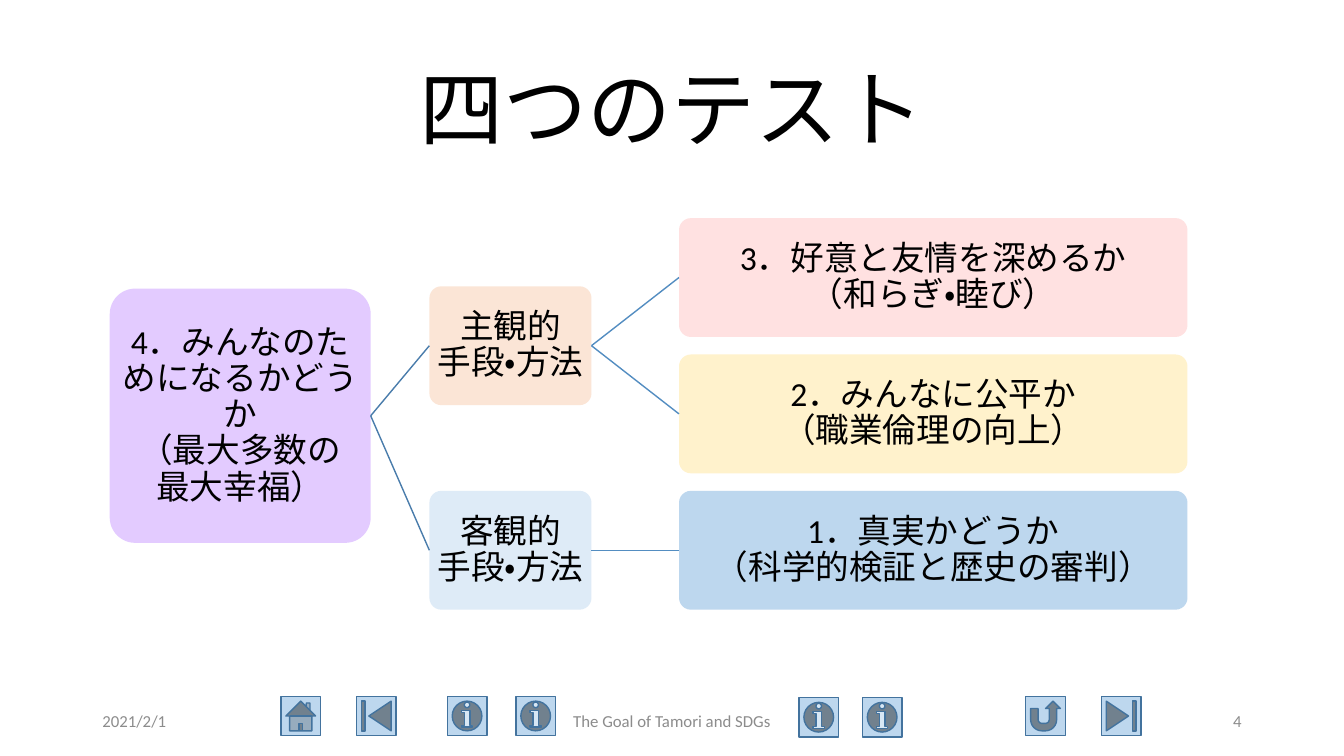
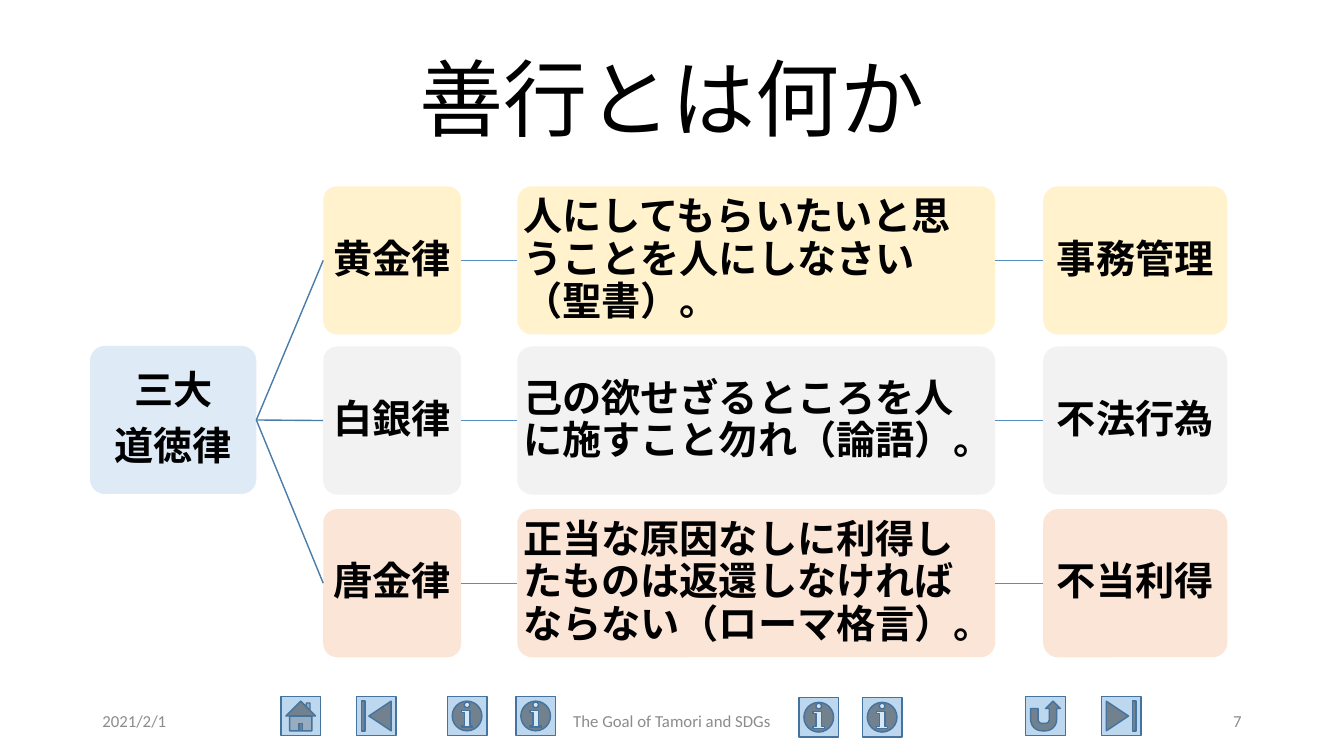
from dataclasses import dataclass

from lxml import etree
from pptx import Presentation
from pptx.dml.color import RGBColor
from pptx.enum.lang import MSO_LANGUAGE_ID
from pptx.enum.shapes import MSO_CONNECTOR, MSO_SHAPE
from pptx.enum.text import MSO_ANCHOR, PP_ALIGN
from pptx.oxml.ns import qn
from pptx.shapes.autoshape import Shape
from pptx.slide import Slide
from pptx.text.text import TextFrame
from pptx.util import Pt

LEFT, CENTER, RIGHT = PP_ALIGN.LEFT, PP_ALIGN.CENTER, PP_ALIGN.RIGHT
MIDDLE = MSO_ANCHOR.MIDDLE
STRAIGHT = MSO_CONNECTOR.STRAIGHT
ROUNDED = MSO_SHAPE.ROUNDED_RECTANGLE
HOME = MSO_SHAPE.ACTION_BUTTON_HOME
BEGINNING = MSO_SHAPE.ACTION_BUTTON_BEGINNING
RETURN = MSO_SHAPE.ACTION_BUTTON_RETURN
END = MSO_SHAPE.ACTION_BUTTON_END
INFORMATION = MSO_SHAPE.ACTION_BUTTON_INFORMATION
JAPANESE = MSO_LANGUAGE_ID.JAPANESE

# Colours
BLACK = RGBColor(0x00, 0x00, 0x00)
FOOTER_GREY = RGBColor(0x8C, 0x8C, 0x8C)
BUTTON_EDGE = RGBColor(0x43, 0x73, 0x9E)
ROOT_LINE = RGBColor(0x49, 0x7C, 0xAB)
BRANCH_LINE = RGBColor(0x53, 0x8D, 0xC1)
VIOLET = RGBColor(0xE3, 0xCB, 0xFF)
PEACH = RGBColor(0xFB, 0xE5, 0xD6)
PINK = RGBColor(0xFF, 0xE1, 0xE1)
CREAM = RGBColor(0xFF, 0xF2, 0xCC)
SILVER = RGBColor(0xF2, 0xF2, 0xF2)
PALE_BLUE = RGBColor(0xDE, 0xEB, 0xF7)
SKY = RGBColor(0xBD, 0xD7, 0xEE)

# Shared geometry
MARGIN = 66
CONTENT_WIDTH = 828
FOOTER_TOP, FOOTER_HEIGHT = 500.5, 28.75
BUTTON_SIZE = 28.3
RIGHT_SITE, LEFT_SITE = 3, 1


@dataclass(frozen=True)
class TextStyle:
    size: float
    font: str = "Calibri"
    color: RGBColor = BLACK
    bold: bool = False
    line_spacing: float = 1.0
    space_after: float = 0


TITLE = TextStyle(60, line_spacing=0.9)
FOOTER = TextStyle(12, color=FOOTER_GREY)
TEST_LABEL = TextStyle(24, line_spacing=0.9, space_after=8.4)
RULE_LABEL = TextStyle(28, "Times New Roman", bold=True, line_spacing=0.9, space_after=9.8)


@dataclass(frozen=True)
class Box:
    left: float
    top: float
    width: float
    height: float


@dataclass(frozen=True)
class Node:
    paragraphs: tuple[str, ...]
    box: Box
    fill: RGBColor
    align: PP_ALIGN = CENTER
    children: tuple["Node", ...] = ()


@dataclass(frozen=True)
class Button:
    kind: MSO_SHAPE
    left: float
    top: float = 497.3


BUTTONS = (
    Button(HOME, 200.7),
    Button(BEGINNING, 254.7),
    Button(RETURN, 732.7),
    Button(END, 786.7),
    Button(INFORMATION, 319.5),
    Button(INFORMATION, 368.5),
    Button(INFORMATION, 570.7, 498.2),
    Button(INFORMATION, 616, 498.2),
)


def write(frame: TextFrame, paragraphs: tuple[str, ...], style: TextStyle, align: PP_ALIGN) -> None:
    """Fill a frame; a newline inside a paragraph is a soft break."""
    frame.word_wrap = True
    frame.vertical_anchor = MIDDLE
    for number, text in enumerate(paragraphs):
        paragraph = frame.add_paragraph() if number else frame.paragraphs[0]
        paragraph.alignment = align
        paragraph.line_spacing = style.line_spacing
        paragraph.space_after = Pt(style.space_after)
        for line_number, line in enumerate(text.split("\n")):
            if line_number:
                paragraph.add_line_break()
            run = paragraph.add_run()
            run.text = line
            run.font.size = Pt(style.size)
            run.font.name = style.font
            run.font.bold = style.bold
            run.font.color.rgb = style.color
            run.font.language_id = JAPANESE


def add_text(slide: Slide, text: str, box: Box, style: TextStyle, align: PP_ALIGN) -> None:
    label = slide.shapes.add_textbox(Pt(box.left), Pt(box.top), Pt(box.width), Pt(box.height))
    write(label.text_frame, (text,), style, align)


def add_filled(slide: Slide, kind: MSO_SHAPE, box: Box, fill: RGBColor) -> Shape:
    shape = slide.shapes.add_shape(kind, Pt(box.left), Pt(box.top), Pt(box.width), Pt(box.height))
    shape.shadow.inherit = False
    shape.fill.solid()
    shape.fill.fore_color.rgb = fill
    return shape


def add_link(slide: Slide, parent: Shape, child: Shape, color: RGBColor) -> None:
    link = slide.shapes.add_connector(STRAIGHT, 0, 0, 0, 0)
    link.begin_connect(parent, RIGHT_SITE)
    link.end_connect(child, LEFT_SITE)
    link.line.color.rgb = color
    link.line.width = Pt(1)
    etree.SubElement(link._element.spPr, qn("a:effectLst"))


def add_tree(slide: Slide, node: Node, style: TextStyle, link_color: RGBColor = ROOT_LINE) -> Shape:
    """Draw a node, then its children, each linked to it."""
    shape = add_filled(slide, ROUNDED, node.box, node.fill)
    shape.adjustments[0] = 0.1
    shape.line.fill.background()
    frame = shape.text_frame
    frame.margin_left = frame.margin_right = frame.margin_top = frame.margin_bottom = Pt(1.2)
    write(frame, node.paragraphs, style, node.align)
    for child in node.children:
        add_link(slide, shape, add_tree(slide, child, style, BRANCH_LINE), link_color)
    return shape


def add_page(deck: Presentation, title: str, title_height: float, number: str) -> Slide:
    """Add a slide with its buttons, title and footer."""
    slide = deck.slides.add_slide(deck.slide_layouts[6])
    for button in BUTTONS:
        shape = add_filled(slide, button.kind, Box(button.left, button.top, BUTTON_SIZE, BUTTON_SIZE), SKY)
        shape.line.color.rgb = BUTTON_EDGE
        shape.line.width = Pt(1)
    add_text(slide, title, Box(MARGIN, 28.75, CONTENT_WIDTH, title_height), TITLE, CENTER)
    for text, left, width, align in (
        ("2021/2/1", MARGIN, 216, LEFT),
        ("The Goal of Tamori and SDGs", 318, 324, CENTER),
        (number, 678, 216, RIGHT),
    ):
        add_text(slide, text, Box(left, FOOTER_TOP, width, FOOTER_HEIGHT), FOOTER, align)
    return slide


def four_tests() -> Node:
    row_height, row_pitch = 84.9, 97.4

    def row_top(row: float) -> float:
        return 155.8 + row * row_pitch

    def means(text: str, row: float, fill: RGBColor, tests: tuple[Node, ...]) -> Node:
        return Node((text,), Box(306.7, row_top(row), 115.8, row_height), fill, children=tests)

    def test(text: str, row: int, fill: RGBColor) -> Node:
        return Node((text,), Box(485, row_top(row), 363.2, row_height), fill)

    subjective = means("主観的\n手段・方法", 0.5, PEACH, (
        test("3．好意と友情を深めるか\n（和らぎ・睦び）", 0, PINK),
        test("2．みんなに公平か\n（職業倫理の向上）", 1, CREAM),
    ))
    objective = means("客観的\n手段・方法", 2, PALE_BLUE, (
        test("1．真実かどうか\n（科学的検証と歴史の審判）", 2, SKY),
    ))
    return Node(("4．みんなのためになるかどうか\n（最大多数の\n最大幸福）",),
                Box(78.4, 206.2, 186.4, 181.6), VIOLET, children=(subjective, objective))


def moral_rules() -> Node:
    height = 105.8

    def rule(name: str, saying: str, law: str, top: float, fill: RGBColor) -> Node:
        legal = Node((law,), Box(745.1, top, 131.6, height), fill)
        quote = Node((saying,), Box(369.5, top, 341.4, height), fill, LEFT, (legal,))
        return Node((name,), Box(230.9, top, 98.5, height), fill, children=(quote,))

    rules = (
        rule("黄金律", "人にしてもらいたいと思うことを人にしなさい（聖書）。", "事務管理", 133.1, CREAM),
        rule("白銀律", "己の欲せざるところを人に施すこと勿れ（論語）。", "不法行為", 247.5, SILVER),
        rule("唐金律", "正当な原因なしに利得したものは返還しなければならない（ローマ格言）。",
             "不当利得", 363.7, PEACH),
    )
    return Node(("三大", "道徳律"), Box(64.3, 247.1, 118.8, height), PALE_BLUE, children=rules)


def main() -> None:
    deck = Presentation()
    deck.slide_width, deck.slide_height = Pt(960), Pt(540)
    add_tree(add_page(deck, "四つのテスト", 104.4, "4"), four_tests(), TEST_LABEL)
    add_tree(add_page(deck, "善行とは何か", 90, "7"), moral_rules(), RULE_LABEL)
    deck.save("out.pptx")


if __name__ == "__main__":
    main()
